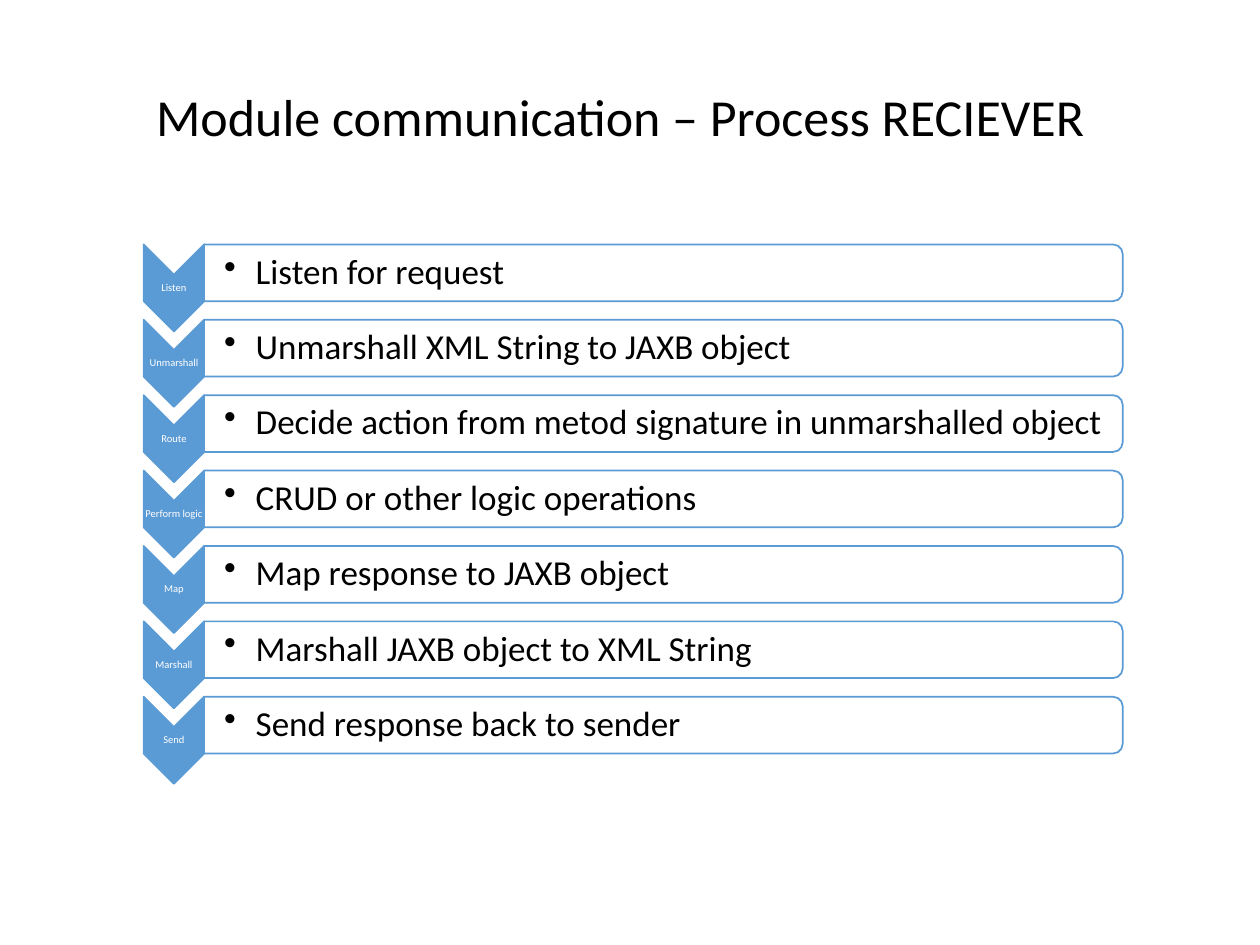
from collections import namedtuple

from lxml import etree
from pptx import Presentation
from pptx.dml.color import RGBColor
from pptx.enum.shapes import MSO_SHAPE
from pptx.enum.text import MSO_ANCHOR, PP_ALIGN
from pptx.oxml.ns import qn
from pptx.util import Inches, Pt

CHEVRON, PANEL = MSO_SHAPE.CHEVRON, MSO_SHAPE.ROUND_2_SAME_RECTANGLE
MIDDLE = MSO_ANCHOR.MIDDLE
LEFT, CENTER = PP_ALIGN.LEFT, PP_ALIGN.CENTER

FONT = "Calibri"
COLORS = {"accent": "5B9BD5", "paper": "FFFFFF", "ink": "000000"}
STEPS = [
    ("Listen", "Listen for request"),
    ("Unmarshall", "Unmarshall XML String to JAXB object"),
    ("Route", "Decide action from metod signature in unmarshalled object"),
    ("Perform logic", "CRUD or other logic operations"),
    ("Map", "Map response to JAXB object"),
    ("Marshall", "Marshall JAXB object to XML String"),
    ("Send", "Send response back to sender"),
]

Box = namedtuple("Box", "left top width height")
SLIDE = Box(0, 0, 10, 7.5)
TITLE = Box(1.14, 0.44, 7.87, 1.02)
PROCESS = Box(1.14, 1.94, 7.77, 4.28)
CHEVRON_WIDTH, CHEVRON_HEIGHT = 0.48, 0.69
PANEL_HEIGHT = 0.45
PANEL_INSET = 0.02
BULLET_INDENT = 0.25


def color(name):
    return RGBColor.from_string(COLORS[name])


def add_turned_shape(slide, kind, box, fill):
    """Add a shape that fills the box after a quarter turn clockwise."""
    shift = (box.width - box.height) / 2
    shape = slide.shapes.add_shape(
        kind, Inches(box.left + shift), Inches(box.top - shift),
        Inches(box.height), Inches(box.width))
    shape.rotation = 90
    shape.shadow.inherit = False
    shape.fill.solid()
    shape.fill.fore_color.rgb = color(fill)
    shape.line.color.rgb = color("accent")
    shape.line.width = Pt(1)
    return shape


def add_text(slide, box, text, size, ink, align=LEFT, insets=(0, 0, 0, 0)):
    shape = slide.shapes.add_textbox(*(Inches(length) for length in box))
    frame = shape.text_frame
    frame.word_wrap = True
    frame.vertical_anchor = MIDDLE
    (frame.margin_left, frame.margin_top,
     frame.margin_right, frame.margin_bottom) = map(Inches, insets)
    paragraph = frame.paragraphs[0]
    paragraph.alignment = align
    paragraph.line_spacing = 0.9
    run = paragraph.add_run()
    run.text = text
    run.font.name = FONT
    run.font.size = Pt(size)
    run.font.color.rgb = color(ink)
    return paragraph


def add_bullet(paragraph):
    properties = paragraph._p.get_or_add_pPr()
    properties.set("marL", str(Inches(BULLET_INDENT)))
    properties.set("indent", str(-Inches(BULLET_INDENT)))
    etree.SubElement(properties, qn("a:buChar"), char="•")


def set_opacity(shape, percent):
    fill_color = shape._element.spPr.find(qn("a:solidFill"))[0]
    etree.SubElement(fill_color, qn("a:alpha"), val=str(percent * 1000))


def add_title(slide, box):
    add_text(slide, box, "Module communication – Process RECIEVER", 29.7,
             "ink", insets=(0.1, 0.05, 0.1, 0.05))


def add_step(slide, box, label, description):
    chevron = Box(box.left, box.top, CHEVRON_WIDTH, CHEVRON_HEIGHT)
    add_turned_shape(slide, CHEVRON, chevron, "accent")
    notch = CHEVRON_WIDTH / 2
    label_box = Box(box.left, box.top + notch, CHEVRON_WIDTH,
                    CHEVRON_HEIGHT - 2 * notch)
    add_text(slide, label_box, label, 6, "paper", CENTER)

    panel = Box(box.left + CHEVRON_WIDTH, box.top,
                box.width - CHEVRON_WIDTH, PANEL_HEIGHT)
    set_opacity(add_turned_shape(slide, PANEL, panel, "paper"), 90)
    text_box = Box(panel.left, panel.top + PANEL_INSET,
                   panel.width - PANEL_INSET, panel.height - 2 * PANEL_INSET)
    add_bullet(add_text(slide, text_box, description, 20, "ink",
                        insets=(0.16, 0.01, 0.01, 0.01)))


def add_process(slide, box):
    """Spread the steps evenly, the last chevron ending at the box bottom."""
    pitch = (box.height - CHEVRON_HEIGHT) / (len(STEPS) - 1)
    for row, (label, description) in enumerate(STEPS):
        step = Box(box.left, box.top + row * pitch, box.width, CHEVRON_HEIGHT)
        add_step(slide, step, label, description)


def main():
    presentation = Presentation()
    presentation.slide_width = Inches(SLIDE.width)
    presentation.slide_height = Inches(SLIDE.height)
    slide = presentation.slides.add_slide(presentation.slide_layouts[6])
    slide.background.fill.solid()
    slide.background.fill.fore_color.rgb = color("paper")
    add_title(slide, TITLE)
    add_process(slide, PROCESS)
    presentation.save("out.pptx")


if __name__ == "__main__":
    main()
